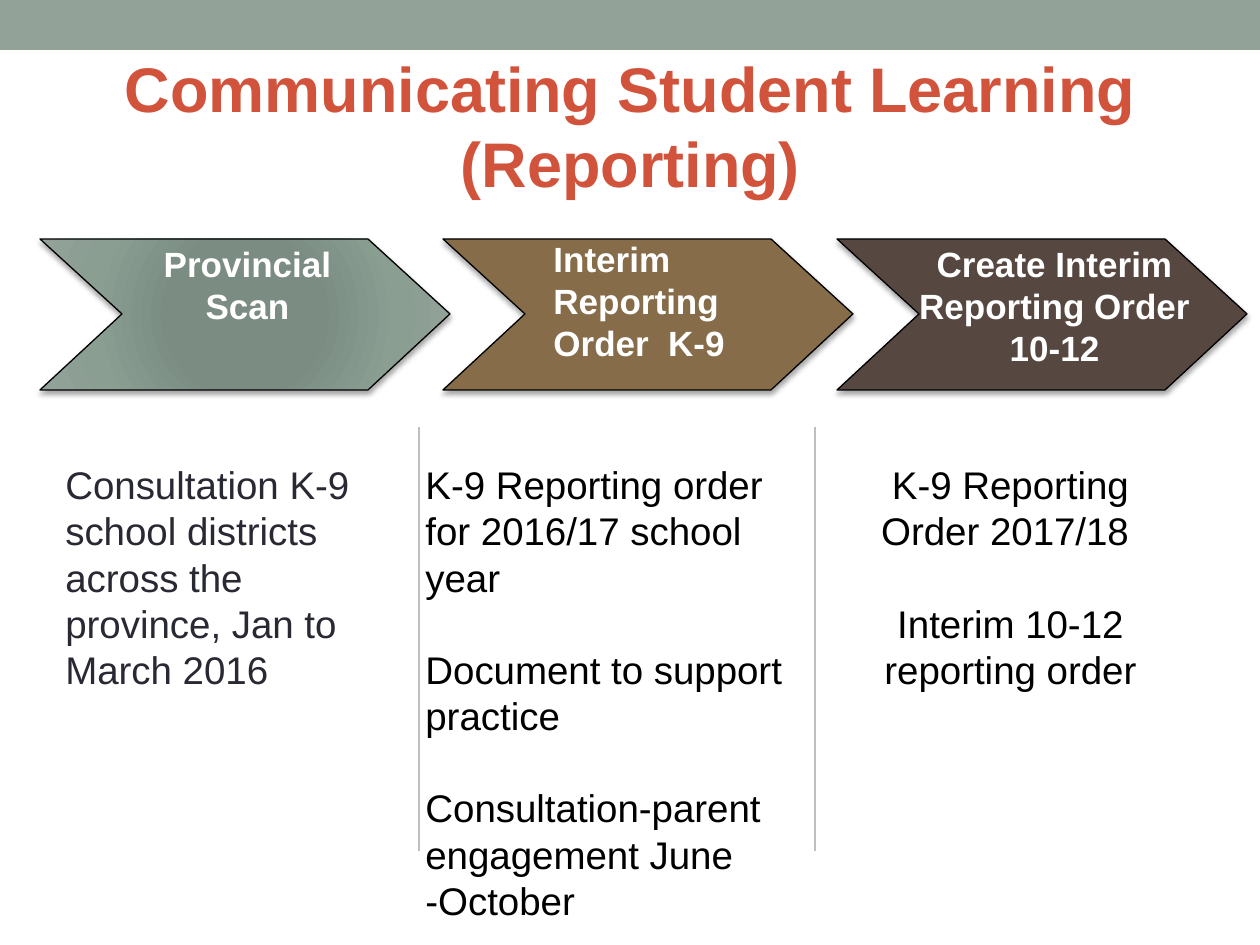
from dataclasses import dataclass

from lxml.etree import SubElement
from pptx import Presentation
from pptx.dml.color import RGBColor
from pptx.enum.shapes import MSO_CONNECTOR, MSO_SHAPE
from pptx.enum.text import MSO_ANCHOR, PP_ALIGN
from pptx.oxml import parse_xml
from pptx.oxml.ns import nsdecls, qn
from pptx.util import Emu, Pt

SCALE = 914400 / 126  # EMU in one px


@dataclass(frozen=True)
class Theme:
    font: str = "Arial"
    band: str = "93A299"
    title: str = "D2533C"
    interim: str = "866C49"
    create: str = "564841"
    outline: str = "000000"
    divider: str = "BFBFBF"
    on_arrow: str = "FFFFFF"
    muted: str = "292934"
    body: str = "000000"
    title_size: int = 36
    arrow_size: int = 20
    body_size: int = 22
    line_width: float = 0.75
    scan_gradient: tuple = ((0, "7B8E82"), (34, "7B8D83"), (70, "8A9E92"), (100, "93A299"))


THEME = Theme()

ARROW_TOP, ARROW_WIDTH, ARROW_HEIGHT, ARROW_NOTCH = 239, 410, 151, 82
BODY_TOP = 455
DIVIDER_TOP, DIVIDER_BOTTOM = 427, 851


def px(value):
    return Emu(round(value * SCALE))


def color(value):
    return RGBColor.from_string(value)


def add_band(slide):
    shape = slide.shapes.add_shape(MSO_SHAPE.RECTANGLE, 0, 0, px(1260), px(50))
    shape.shadow.inherit = False
    shape.fill.solid()
    shape.fill.fore_color.rgb = color(THEME.band)
    shape.line.fill.background()


def add_text(slide, box, paragraphs, size, text_color, bold=False,
             align=PP_ALIGN.LEFT, gap=0):
    """Add a wrapped text box; gap is the space in points after each paragraph."""
    text_box = slide.shapes.add_textbox(*map(px, box))
    frame = text_box.text_frame
    frame.word_wrap = True
    frame.vertical_anchor = MSO_ANCHOR.TOP
    frame.text = "\n".join(paragraphs)
    for paragraph in frame.paragraphs:
        paragraph.alignment = align
        paragraph.space_after = Pt(gap)
        font = paragraph.runs[0].font
        font.name = THEME.font
        font.size = Pt(size)
        font.bold = bold
        font.color.rgb = color(text_color)


def set_radial_fill(shape, stops):
    """Replace the solid fill by a radial gradient of (percent, colour) stops."""
    gradient = parse_xml(f'<a:gradFill {nsdecls("a")} rotWithShape="1"/>')
    stop_list = SubElement(gradient, qn("a:gsLst"))
    for percent, value in stops:
        stop = SubElement(stop_list, qn("a:gs"), pos=str(percent * 1000))
        SubElement(stop, qn("a:srgbClr"), val=value)
    radial = SubElement(gradient, qn("a:path"), path="circle")
    SubElement(radial, qn("a:fillToRect"), {side: "100000" for side in "ltrb"})
    properties = shape._element.spPr
    properties.replace(properties.find(qn("a:solidFill")), gradient)


def add_shadow(shape):
    shape.shadow.inherit = False
    effects = shape._element.spPr.find(qn("a:effectLst"))
    shadow = SubElement(effects, qn("a:outerShdw"), blurRad=str(Pt(3.1)),
                        dist=str(Pt(1.8)), dir="5400000", rotWithShape="0")
    shade = SubElement(shadow, qn("a:srgbClr"), val=THEME.outline)
    SubElement(shade, qn("a:alpha"), val="35000")


def add_arrow(slide, left, fill):
    """Add a chevron; fill is one colour or a tuple of gradient stops."""
    right, bottom = left + ARROW_WIDTH, ARROW_TOP + ARROW_HEIGHT
    middle = ARROW_TOP + ARROW_HEIGHT / 2
    builder = slide.shapes.build_freeform(left, ARROW_TOP, scale=SCALE)
    builder.add_line_segments([
        (right - ARROW_NOTCH, ARROW_TOP), (right, middle),
        (right - ARROW_NOTCH, bottom), (left, bottom),
        (left + ARROW_NOTCH, middle),
    ], close=True)
    shape = builder.convert_to_shape()
    shape.fill.solid()
    if isinstance(fill, str):
        shape.fill.fore_color.rgb = color(fill)
    else:
        set_radial_fill(shape, fill)
    shape.line.color.rgb = color(THEME.outline)
    shape.line.width = Pt(THEME.line_width)
    add_shadow(shape)


def add_divider(slide, x):
    line = slide.shapes.add_connector(
        MSO_CONNECTOR.STRAIGHT, px(x), px(DIVIDER_TOP), px(x), px(DIVIDER_BOTTOM))
    line.line.color.rgb = color(THEME.divider)
    line.line.width = Pt(THEME.line_width)
    SubElement(line._element.spPr, qn("a:effectLst"))


def main():
    presentation = Presentation()
    presentation.slide_width, presentation.slide_height = px(1260), px(945)
    slide = presentation.slides.add_slide(presentation.slide_layouts[6])

    add_band(slide)
    add_text(slide, (40, 43, 1181, 165), ["Communicating Student Learning (Reporting)"],
             THEME.title_size, THEME.title, bold=True, align=PP_ALIGN.CENTER)

    for left, fill in ((40, THEME.scan_gradient), (443, THEME.interim), (837, THEME.create)):
        add_arrow(slide, left, fill)

    center, start = PP_ALIGN.CENTER, PP_ALIGN.LEFT
    for box, label, align in (
        ((112, 236, 271, 97), "Provincial Scan", center),
        ((541, 231, 234, 140), "Interim Reporting Order  K-9", start),
        ((888, 236, 333, 140), "Create Interim Reporting Order 10-12", center),
    ):
        add_text(slide, box, [label], THEME.arrow_size, THEME.on_arrow, bold=True, align=align)

    for x in (419, 815):
        add_divider(slide, x)

    line_gap = THEME.body_size * 1.2
    for left, width, height, paragraphs, text_color, align, gap in (
        (53, 353, 246, ["Consultation K-9 school districts",
                        "across the province, Jan to March 2016"], THEME.muted, start, 0),
        (413, 410, 479, ["K-9 Reporting order for 2016/17 school year",
                         "Document to support practice",
                         "Consultation-parent engagement June -October"],
         THEME.body, start, line_gap),
        (834, 353, 246, ["K-9 Reporting Order 2017/18 ",
                         "Interim 10-12 reporting order"], THEME.body, center, line_gap),
    ):
        add_text(slide, (left, BODY_TOP, width, height), paragraphs,
                 THEME.body_size, text_color, align=align, gap=gap)

    presentation.save("out.pptx")


if __name__ == "__main__":
    main()
